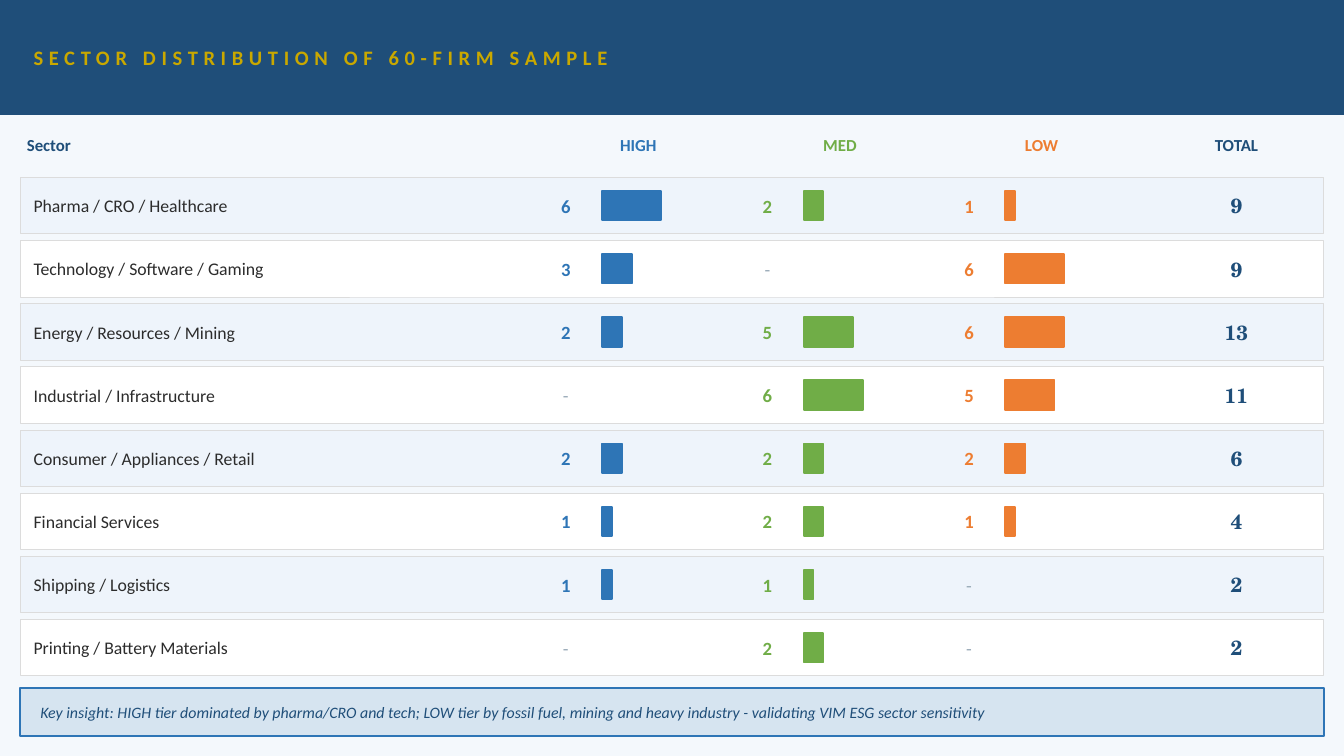
from dataclasses import dataclass

from pptx import Presentation
from pptx.dml.color import RGBColor
from pptx.enum.shapes import MSO_SHAPE
from pptx.enum.text import MSO_ANCHOR, PP_ALIGN
from pptx.slide import Slide
from pptx.util import Inches, Pt

# Widescreen page, 16:9
SLIDE_WIDTH = 10
SLIDE_HEIGHT = SLIDE_WIDTH * 9 / 16

# Palette
NAVY, BLUE, GREEN, ORANGE, GOLD = "1F4E79", "2E75B6", "70AD47", "ED7D31", "C9A800"
BACKGROUND, WHITE, TINT, NOTE_FILL = "F4F8FC", "FFFFFF", "EEF4FB", "D6E4F0"
BORDER, INK, MUTED = "DCDCDC", "2C2C2C", "9AABB8"

# Grid: rows repeat at ROW_PITCH, tier columns at TIER_PITCH
MARGIN = 0.15
PANEL_WIDTH = SLIDE_WIDTH - 2 * MARGIN
BANNER_HEIGHT = 0.85
HEADER_TOP, HEADER_HEIGHT = 0.92, 0.32
ROW_TOP, ROW_PITCH, ROW_HEIGHT = 1.32, 0.47, 0.42
LABEL_LEFT = 0.25
TIER_LEFT, TIER_PITCH = 4, 1.5
COUNT_WIDTH, BAR_OFFSET = 0.42, 0.48
BAR_FULL_WIDTH, BAR_HEIGHT = 0.44, 0.22
TOTAL_LEFT, TOTAL_WIDTH = 8.6, 1.2
NOTE_TOP, NOTE_HEIGHT = 5.12, 0.36


@dataclass(frozen=True)
class Box:
    left: float
    top: float
    width: float
    height: float

    def emu(self) -> list[int]:
        return [Inches(v) for v in (self.left, self.top, self.width, self.height)]


@dataclass(frozen=True)
class Style:
    size: float
    color: str
    bold: bool = False
    italic: bool = False
    centered: bool = False
    font: str = "Calibri"
    spacing: float = 0


@dataclass(frozen=True)
class Tier:
    name: str
    color: str


@dataclass(frozen=True)
class Sector:
    name: str
    counts: tuple[int, int, int]


TIERS = [Tier("HIGH", BLUE), Tier("MED", GREEN), Tier("LOW", ORANGE)]
SECTORS = [
    Sector("Pharma / CRO / Healthcare", (6, 2, 1)),
    Sector("Technology / Software / Gaming", (3, 0, 6)),
    Sector("Energy / Resources / Mining", (2, 5, 6)),
    Sector("Industrial / Infrastructure", (0, 6, 5)),
    Sector("Consumer / Appliances / Retail", (2, 2, 2)),
    Sector("Financial Services", (1, 2, 1)),
    Sector("Shipping / Logistics", (1, 1, 0)),
    Sector("Printing / Battery Materials", (0, 2, 0)),
]
LARGEST_COUNT = max(max(sector.counts) for sector in SECTORS)


def rgb(color: str) -> RGBColor:
    return RGBColor.from_string(color)


def add_rectangle(slide: Slide, box: Box, fill: str, line: str, line_width: float = 1) -> None:
    shape = slide.shapes.add_shape(MSO_SHAPE.RECTANGLE, *box.emu())
    shape.shadow.inherit = False
    shape.fill.solid()
    shape.fill.fore_color.rgb = rgb(fill)
    shape.line.color.rgb = rgb(line)
    shape.line.width = Pt(line_width)


def add_text(slide: Slide, box: Box, text: str, style: Style) -> None:
    text_frame = slide.shapes.add_textbox(*box.emu()).text_frame
    text_frame.word_wrap = True
    text_frame.vertical_anchor = MSO_ANCHOR.MIDDLE
    text_frame.margin_left = text_frame.margin_right = 0
    text_frame.margin_top = text_frame.margin_bottom = 0
    text_frame.text = text
    paragraph = text_frame.paragraphs[0]
    paragraph.alignment = PP_ALIGN.CENTER if style.centered else PP_ALIGN.LEFT
    run = paragraph.runs[0]
    run.font.name = style.font
    run.font.size = Pt(style.size)
    run.font.bold = style.bold
    run.font.italic = style.italic
    run.font.color.rgb = rgb(style.color)
    if style.spacing:
        run.font._element.set("spc", str(round(style.spacing * 100)))


def tier_left(column: int) -> float:
    return TIER_LEFT + column * TIER_PITCH


def add_header(slide: Slide) -> None:
    def heading(left: float, width: float, text: str, color: str, centered: bool = True) -> None:
        add_text(slide, Box(left, HEADER_TOP, width, HEADER_HEIGHT), text,
                 Style(9, color, bold=True, centered=centered))

    heading(0.2, 3.7, "Sector", NAVY, centered=False)
    for column, tier in enumerate(TIERS):
        heading(tier_left(column), TIER_PITCH, tier.name, tier.color)
    heading(TOTAL_LEFT, TOTAL_WIDTH, "TOTAL", NAVY)


def add_count(slide: Slide, left: float, top: float, count: int, color: str) -> None:
    box = Box(left, top, COUNT_WIDTH, ROW_HEIGHT)
    if not count:
        add_text(slide, box, "-", Style(10, MUTED, centered=True))
        return
    add_text(slide, box, str(count), Style(10, color, bold=True, centered=True))
    bar = Box(left + BAR_OFFSET, top + (ROW_HEIGHT - BAR_HEIGHT) / 2,
              BAR_FULL_WIDTH * count / LARGEST_COUNT, BAR_HEIGHT)
    add_rectangle(slide, bar, color, color)


def add_sector(slide: Slide, row: int, sector: Sector) -> None:
    top = ROW_TOP + row * ROW_PITCH
    add_rectangle(slide, Box(MARGIN, top, PANEL_WIDTH, ROW_HEIGHT),
                  WHITE if row % 2 else TINT, BORDER, 0.5)
    add_text(slide, Box(LABEL_LEFT, top, 3.65, ROW_HEIGHT), sector.name, Style(9.5, INK))
    for column, (tier, count) in enumerate(zip(TIERS, sector.counts)):
        add_count(slide, tier_left(column), top, count, tier.color)
    add_text(slide, Box(TOTAL_LEFT, top, TOTAL_WIDTH, ROW_HEIGHT), str(sum(sector.counts)),
             Style(11, NAVY, bold=True, centered=True, font="TeX Gyre Schola"))


def main() -> None:
    presentation = Presentation()
    presentation.slide_width = Inches(SLIDE_WIDTH)
    presentation.slide_height = Inches(SLIDE_HEIGHT)
    slide = presentation.slides.add_slide(presentation.slide_layouts[6])
    slide.background.fill.solid()
    slide.background.fill.fore_color.rgb = rgb(BACKGROUND)

    # Title banner
    add_rectangle(slide, Box(0, 0, SLIDE_WIDTH, BANNER_HEIGHT), NAVY, NAVY)
    add_text(slide, Box(LABEL_LEFT, 0, SLIDE_WIDTH - 2 * LABEL_LEFT, BANNER_HEIGHT),
             "SECTOR DISTRIBUTION OF 60-FIRM SAMPLE", Style(11, GOLD, bold=True, spacing=3))

    # Column headings and sector rows
    add_header(slide)
    for row, sector in enumerate(SECTORS):
        add_sector(slide, row, sector)

    # Key insight
    add_rectangle(slide, Box(MARGIN, NOTE_TOP, PANEL_WIDTH, NOTE_HEIGHT), NOTE_FILL, BLUE)
    add_text(slide, Box(2 * MARGIN, NOTE_TOP, SLIDE_WIDTH - 4 * MARGIN, NOTE_HEIGHT),
             "Key insight: HIGH tier dominated by pharma/CRO and tech; LOW tier by fossil fuel, "
             "mining and heavy industry - validating VIM ESG sector sensitivity",
             Style(8.5, NAVY, italic=True))

    presentation.save("out.pptx")


if __name__ == "__main__":
    main()
